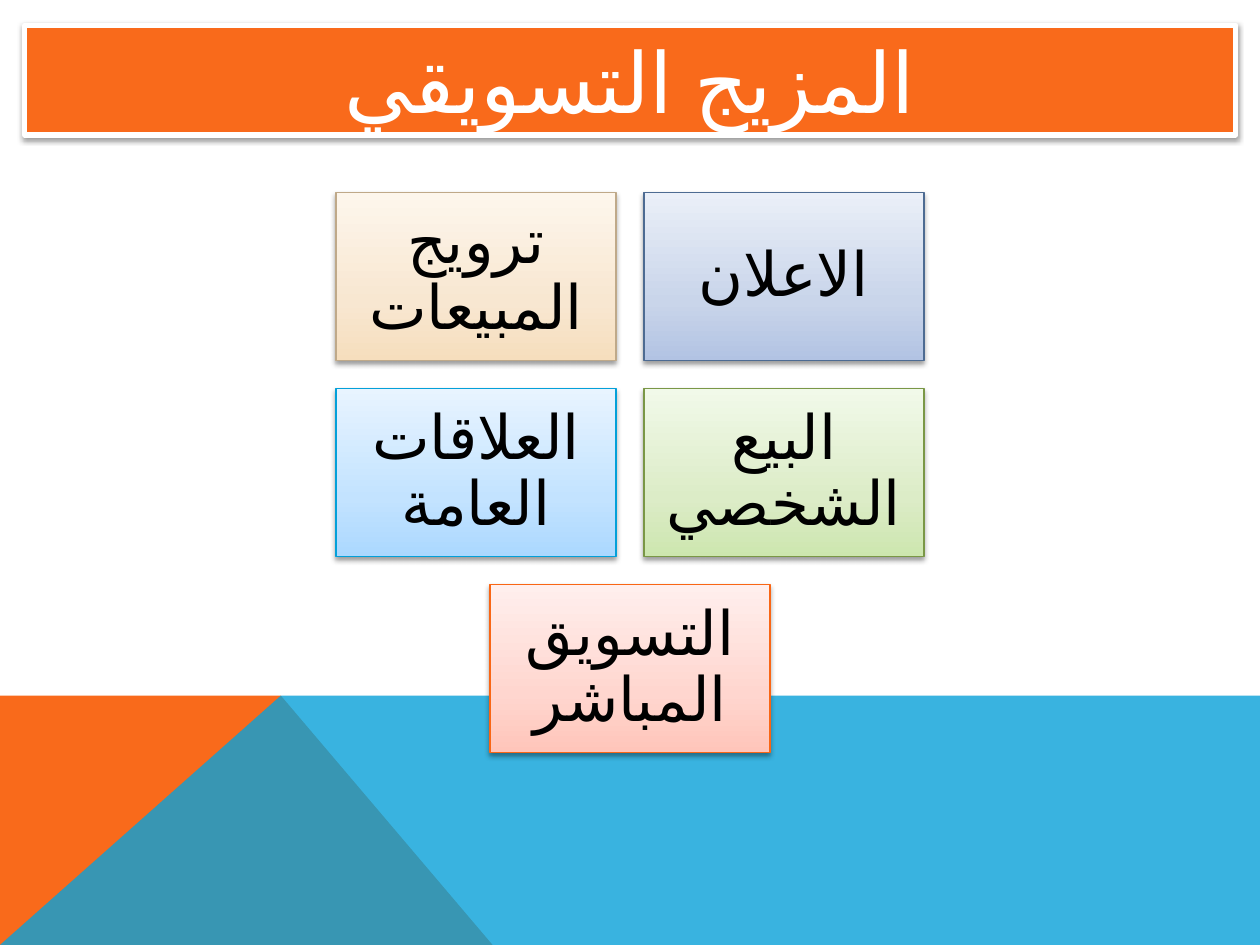
from dataclasses import dataclass

from lxml.etree import SubElement
from pptx import Presentation
from pptx.dml.color import RGBColor
from pptx.enum.lang import MSO_LANGUAGE_ID
from pptx.enum.shapes import MSO_SHAPE
from pptx.enum.text import MSO_ANCHOR, MSO_AUTO_SIZE, PP_ALIGN
from pptx.oxml.ns import qn
from pptx.util import Pt


@dataclass(frozen=True)
class Theme:
    font: str = "Lato"
    head: int = 48
    body: int = 35
    ink: str = "000000"
    pale: str = "FFFFFF"
    warm: str = "F96A1B"
    cool: str = "08A1D9"
    stops: tuple = (0, 35, 100)


THEME = Theme()
CARDS = [
    ("الاعلان", "4D6B92", ("B2C3E3", "C9D5EA", "EAEFF8")),
    ("ترويج المبيعات", "BFA989", ("F6DEBD", "F8E7D1", "FDF6EC")),
    ("البيع الشخصي", "7A9746", ("CDE6AF", "DCECC7", "F1F9E9")),
    ("العلاقات العامة", "03A0D9", ("ABD8FF", "C3E3FF", "E8F4FF")),
    ("التسويق المباشر", "F96615", ("FFC5BA", "FFD6CF", "FFEFED")),
]


def paint(fill, tone):
    fill.solid()
    fill.fore_color.rgb = RGBColor.from_string(tone)


def add_tone(node, tone, alpha):
    color = SubElement(node, qn("a:srgbClr"), val=tone)
    SubElement(color, qn("a:alpha"), val=str(alpha * 1000))


def blend(shape, tones):
    shape.fill.gradient()
    grad = shape._element.spPr.find(qn("a:gradFill"))
    stops = grad.find(qn("a:gsLst"))
    for stop in list(stops):
        stops.remove(stop)
    for place, tone in zip(THEME.stops, tones):
        stop = SubElement(stops, qn("a:gs"), pos=str(place * 1000))
        add_tone(stop, tone, 100)
    grad.find(qn("a:lin")).set("ang", "16200000")


def edge(shape, tone, width):
    paint(shape.line.fill, tone)
    shape.line.width = Pt(width)


def shade(shape):
    shape.shadow.inherit = False
    effects = shape._element.spPr.find(qn("a:effectLst"))
    drop = SubElement(effects, qn("a:outerShdw"), blurRad=str(Pt(3.1)),
                      dist=str(Pt(1.6)), dir="5400000", rotWithShape="0")
    add_tone(drop, THEME.ink, 38)


def write(shape, text, size, tone):
    frame = shape.text_frame
    frame.word_wrap = True
    frame.auto_size = MSO_AUTO_SIZE.NONE
    frame.vertical_anchor = MSO_ANCHOR.MIDDLE
    para = frame.paragraphs[0]
    para.alignment = PP_ALIGN.CENTER
    para._p.get_or_add_pPr().set("rtl", "1")
    run = para.add_run()
    run.text = text
    run.font.size = Pt(size)
    run.font.name = THEME.font
    run.font.language_id = MSO_LANGUAGE_ID.ARABIC_EGYPT
    paint(run.font.fill, tone)
    return para


def add_wedge(slide, points, tone):
    first, *rest = [(Pt(x), Pt(y)) for x, y in points]
    path = slide.shapes.build_freeform(*first)
    path.add_line_segments(rest, close=True)
    shape = path.convert_to_shape()
    paint(shape.fill, tone)
    shape.line.fill.background()
    shape.shadow.inherit = False
    return shape


def add_base(slide, left, top, width, height):
    right, low = left + width, top + height
    peak = (left + 160.5, top)
    add_wedge(slide, [(left, low), (left, top), peak, (left + 281.5, low)],
              THEME.warm)
    cool = add_wedge(slide, [(left, low), peak, (right, top), (right, low)],
                     THEME.cool)
    color = cool._element.spPr.find(qn("a:solidFill"))[0]
    SubElement(color, qn("a:alpha"), val="80000")


def add_title(slide, left, top, width, height):
    title = slide.shapes.title
    title.left, title.top = Pt(left), Pt(top)
    title.width, title.height = Pt(width), Pt(height)
    paint(title.fill, THEME.warm)
    edge(title, THEME.pale, 3)
    shade(title)
    write(title, "المزيج التسويقي", THEME.head, THEME.pale)


def add_card(slide, left, top, width, height, card):
    text, tone, tones = card
    shape = slide.shapes.add_shape(MSO_SHAPE.RECTANGLE, Pt(left), Pt(top),
                                   Pt(width), Pt(height))
    blend(shape, tones)
    edge(shape, tone, 0.75)
    shade(shape)
    frame = shape.text_frame
    frame.margin_left = frame.margin_right = Pt(10.8)
    frame.margin_top = frame.margin_bottom = Pt(10.8)
    write(shape, text, THEME.body, THEME.ink).line_spacing = 0.9


def add_grid(slide, left, top, width, height, gap=16, cols=2):
    rows = -(-len(CARDS) // cols)
    wide = (width - gap * (cols - 1)) / cols
    high = (height - gap * (rows - 1)) / rows
    for row in range(rows):
        cards = CARDS[row * cols:(row + 1) * cols]
        span = len(cards) * (wide + gap) - gap
        right = left + (width + span) / 2
        for col, card in enumerate(cards):
            add_card(slide, right - wide - col * (wide + gap),
                     top + row * (high + gap), wide, high, card)


def main():
    deck = Presentation()
    deck.slide_width, deck.slide_height = Pt(720), Pt(540)
    slide = deck.slides.add_slide(deck.slide_layouts[5])
    paint(slide.background.fill, THEME.pale)
    add_base(slide, 0, 397.5, 720, 142.5)
    add_title(slide, 14.2, 14.4, 692, 62.8)
    add_grid(slide, 192, 110, 336, 320)
    deck.save("out.pptx")


if __name__ == "__main__":
    main()
